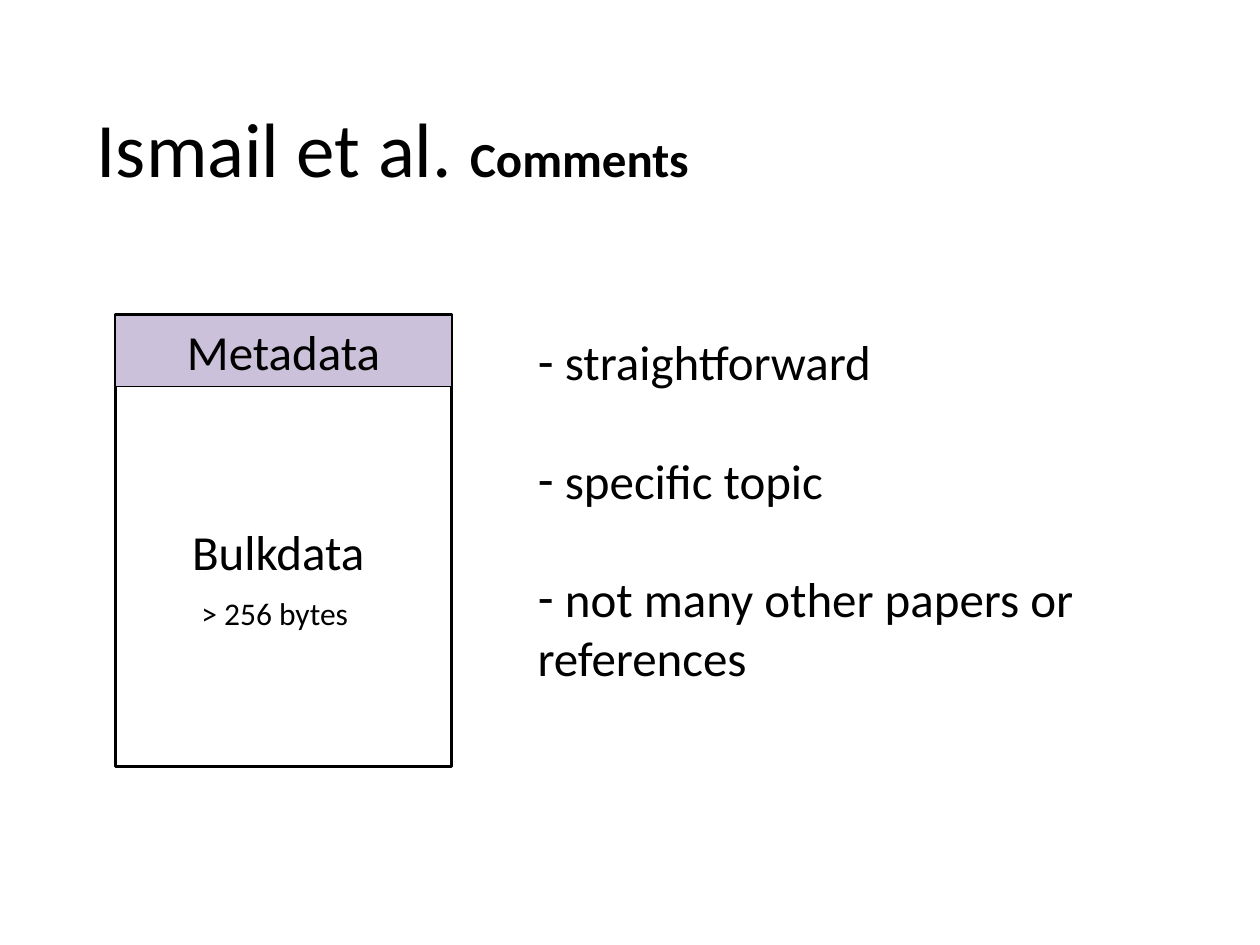
from lxml.etree import SubElement
from pptx import Presentation
from pptx.dml.color import RGBColor
from pptx.enum.shapes import MSO_SHAPE
from pptx.enum.text import MSO_ANCHOR, MSO_AUTO_SIZE, PP_ALIGN
from pptx.oxml.ns import qn
from pptx.util import Pt


def color(value):
    return RGBColor.from_string(value)


def write(paragraph, text, size=28, bold=False, font="Calibri", ink="000000",
          align=PP_ALIGN.LEFT, before=0):
    """Append a formatted run and set the paragraph's layout."""
    paragraph.alignment = align
    paragraph.space_before = Pt(before)
    run = paragraph.add_run()
    run.text = text
    run.font.name = font
    run.font.size = Pt(size)
    run.font.bold = bold
    run.font.color.rgb = color(ink)


def add_dash(paragraph):
    """Give the paragraph a dash bullet without a hanging indent."""
    properties = paragraph._p.get_or_add_pPr()
    properties.set("marL", "0")
    properties.set("indent", "0")
    SubElement(properties, qn("a:buChar")).set("char", "-")


class SlideBuilder:
    line_color = "000000"
    bullet_gap = 34

    def __init__(self, slide):
        self.slide = slide

    def place(self, shape, left, top, width, height):
        shape.left, shape.top = Pt(left), Pt(top)
        shape.width, shape.height = Pt(width), Pt(height)
        frame = shape.text_frame
        frame.word_wrap = True
        frame.auto_size = MSO_AUTO_SIZE.NONE
        frame.vertical_anchor = MSO_ANCHOR.TOP
        return frame

    def title(self, box, name, topic):
        paragraph = self.place(self.slide.shapes.title, *box).paragraphs[0]
        write(paragraph, name, size=44)
        write(paragraph, topic, bold=True)

    def bullets(self, box, items):
        frame = self.place(self.slide.placeholders[1], *box)
        for index, item in enumerate(items):
            paragraph = frame.add_paragraph() if index else frame.paragraphs[0]
            write(paragraph, item, before=self.bullet_gap if index else 0)
            add_dash(paragraph)

    def rectangle(self, box, fill, line_width, text=None):
        shape = self.slide.shapes.add_shape(
            MSO_SHAPE.RECTANGLE, *(Pt(length) for length in box))
        shape.shadow.inherit = False
        shape.fill.solid()
        shape.fill.fore_color.rgb = color(fill)
        shape.line.color.rgb = color(self.line_color)
        shape.line.width = Pt(line_width)
        if text:
            shape.text_frame.vertical_anchor = MSO_ANCHOR.MIDDLE
            write(shape.text_frame.paragraphs[0], text, align=PP_ALIGN.CENTER)

    def label(self, box, text, **style):
        shape = self.slide.shapes.add_textbox(0, 0, 0, 0)
        write(self.place(shape, *box).paragraphs[0], text, **style)


def main():
    presentation = Presentation()
    presentation.slide_width, presentation.slide_height = Pt(720), Pt(540)
    layout = presentation.slide_layouts[1]
    builder = SlideBuilder(presentation.slides.add_slide(layout))

    builder.title((48, 54, 620, 85), "Ismail et al. ", "Comments")
    left, top, width = 66, 180, 192
    builder.rectangle((left, top, width, 258), "FFFFFF", 2)
    builder.rectangle((left, top, width, 41), "CCC1DA", 0.75, "Metadata")
    builder.label((78, 294.5, 162, 41), "Bulkdata", align=PP_ALIGN.CENTER)
    builder.label((108, 336, 138, 29), "> 256 bytes", size=18)
    builder.bullets((300, 186, 372, 245), [
        " straightforward",
        " specific topic",
        " not many other papers or references",
    ])
    presentation.save("out.pptx")


if __name__ == "__main__":
    main()
